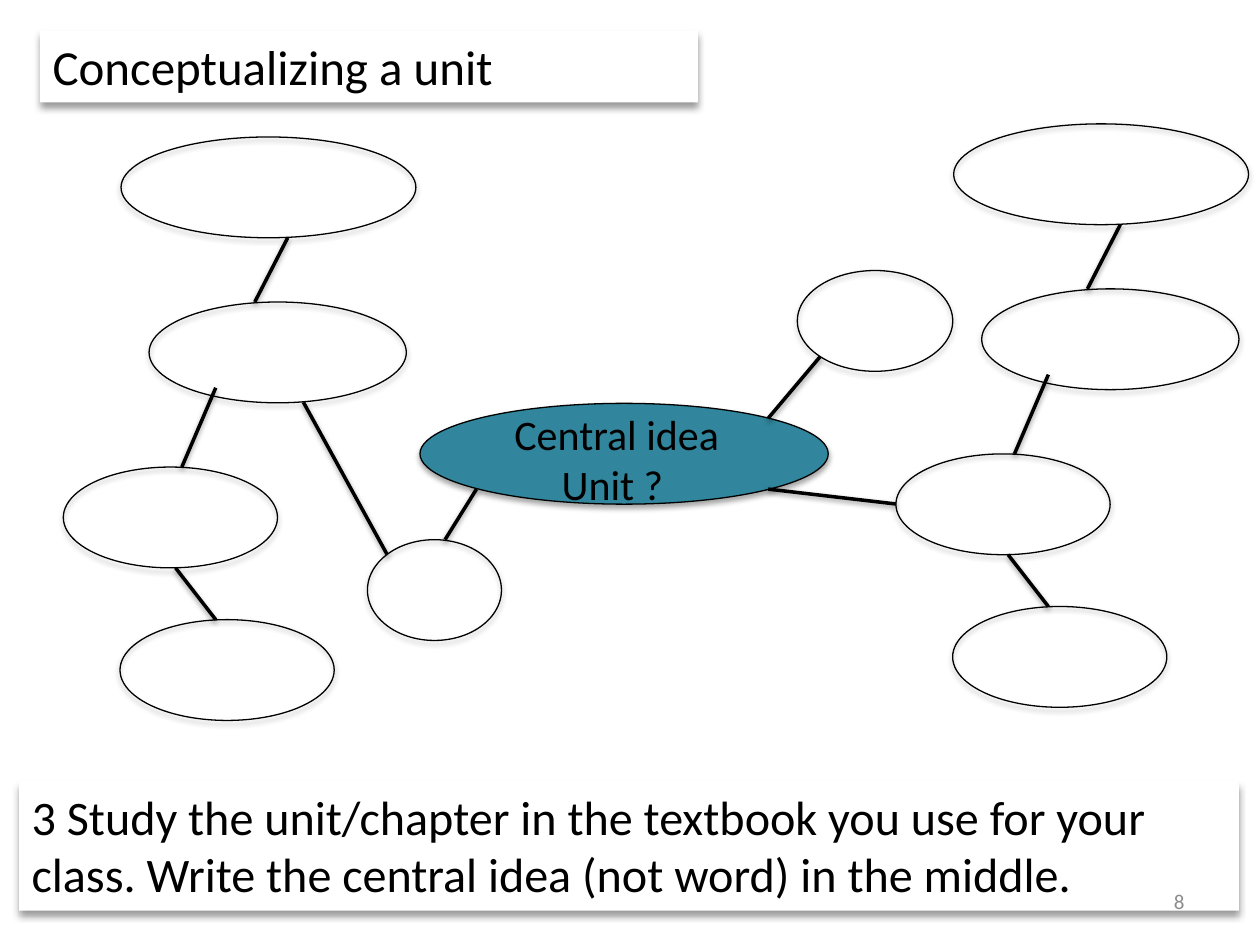
from lxml import etree
from pptx import Presentation
from pptx.dml.color import RGBColor
from pptx.enum.shapes import MSO_CONNECTOR, MSO_SHAPE
from pptx.enum.text import MSO_ANCHOR, PP_ALIGN
from pptx.oxml.ns import qn
from pptx.util import Pt

OVAL, RECTANGLE = MSO_SHAPE.OVAL, MSO_SHAPE.RECTANGLE
STRAIGHT = MSO_CONNECTOR.STRAIGHT
LEFT, RIGHT = PP_ALIGN.LEFT, PP_ALIGN.RIGHT
TOP, MIDDLE = MSO_ANCHOR.TOP, MSO_ANCHOR.MIDDLE

BLACK = RGBColor(0x00, 0x00, 0x00)
WHITE = RGBColor(0xFF, 0xFF, 0xFF)
TEAL = RGBColor(0x31, 0x85, 0x9C)
GRAY = RGBColor(0x8C, 0x8C, 0x8C)
FONT = "Calibri"

# Shadows: opacity in percent, blur and distance in points
OVAL_SHADOW = (35, 3.1, 1.8)
BANNER_SHADOW = (40, 4, 3)
LINK_SHADOW = (38, 3.1, 1.6)

OVAL_HEIGHT = 57.6


def add_shadow(properties, opacity, blur, distance):
    effects = properties.find(qn("a:effectLst"))
    if effects is None:
        effects = etree.SubElement(properties, qn("a:effectLst"))
    shadow = etree.SubElement(effects, qn("a:outerShdw"), blurRad=str(Pt(blur)),
                              dist=str(Pt(distance)), dir="5400000", rotWithShape="0")
    color = etree.SubElement(shadow, qn("a:srgbClr"), val=str(BLACK))
    etree.SubElement(color, qn("a:alpha"), val=str(opacity * 1000))


def write_text(shape, lines, size, color=BLACK, align=LEFT, anchor=TOP):
    frame = shape.text_frame
    frame.word_wrap = True
    frame.vertical_anchor = anchor
    frame.text = "\n".join(lines)
    for paragraph in frame.paragraphs:
        paragraph.alignment = align
        paragraph.font.name = FONT
        paragraph.font.size = Pt(size)
        paragraph.font.color.rgb = color
    return frame


def add_oval(slide, left, top, width, fill=None):
    oval = slide.shapes.add_shape(OVAL, Pt(left), Pt(top), Pt(width), Pt(OVAL_HEIGHT))
    if fill is None:
        oval.fill.background()
    else:
        oval.fill.solid()
        oval.fill.fore_color.rgb = fill
    oval.line.color.rgb = BLACK
    oval.line.width = Pt(0.75)
    oval.shadow.inherit = False
    add_shadow(oval._element.spPr, *OVAL_SHADOW)


def add_link(slide, x1, y1, x2, y2):
    link = slide.shapes.add_connector(STRAIGHT, Pt(x1), Pt(y1), Pt(x2), Pt(y2))
    link.line.color.rgb = BLACK
    link.line.width = Pt(2)
    add_shadow(link._element.spPr, *LINK_SHADOW)


def add_banner(slide, left, top, width, height, text, size):
    banner = slide.shapes.add_shape(RECTANGLE, Pt(left), Pt(top), Pt(width), Pt(height))
    banner.fill.solid()
    banner.fill.fore_color.rgb = WHITE
    banner.line.fill.background()
    banner.shadow.inherit = False
    add_shadow(banner._element.spPr, *BANNER_SHADOW)
    write_text(banner, [text], size)


def add_center(slide, left, top):
    add_oval(slide, left, top, 233.3, TEAL)
    label = slide.shapes.add_textbox(Pt(left + 46.8), Pt(top - 0.7), Pt(147.6), Pt(65.5))
    frame = write_text(label, ["Central idea", "Unit ?"], 24)
    # Indent the second line
    frame.paragraphs[1]._p.get_or_add_pPr().set("marL", str(Pt(27)))


def add_chain(slide, left, top):
    """Four linked ovals, placed from the top left corner of the chain."""
    for x, y, width in ((33, 0, 168.5), (49, 94.3, 147),
                        (0, 188.6, 122.4), (32.4, 275.8, 122.4)):
        add_oval(slide, left + x, top + y, width)
    for x1, y1, x2, y2 in ((128.2, 57.6, 109.4, 94.3), (67.7, 188.6, 87.1, 143.3),
                           (64.1, 246.2, 87.1, 275.8)):
        add_link(slide, left + x1, top + y1, left + x2, top + y2)


def add_page_number(slide, left, top, width, height):
    box = slide.shapes.add_textbox(Pt(left), Pt(top), Pt(width), Pt(height))
    write_text(box, ["8"], 12, GRAY, RIGHT, MIDDLE)


def main():
    presentation = Presentation()
    presentation.slide_width, presentation.slide_height = Pt(720), Pt(540)
    slide = presentation.slides.add_slide(presentation.slide_layouts[6])

    # Central idea, title and task
    add_center(slide, 240, 230.5)
    add_banner(slide, 23, 17.3, 375.8, 41.2, "Conceptualizing a unit", 28)
    add_banner(slide, 11, 446.2, 697, 74.2,
               "3 Study the unit/chapter in the textbook you use for your class. "
               "Write the central idea (not word) in the middle.", 27.5)

    # Right branch
    add_oval(slide, 455.6, 154.6, 88.8)
    add_link(slide, 439, 239, 468.7, 203.8)
    add_chain(slide, 512, 70.8)
    add_link(slide, 439, 279.5, 512, 288)

    # Left branch
    add_oval(slide, 210, 308.4, 76.6)
    add_link(slide, 254.3, 308.4, 272.3, 279.5)
    add_chain(slide, 36.2, 78.3)
    add_link(slide, 173.4, 229.9, 221.2, 316.8)

    add_page_number(slide, 516, 500.5, 168, 28.8)
    presentation.save("out.pptx")


if __name__ == "__main__":
    main()
